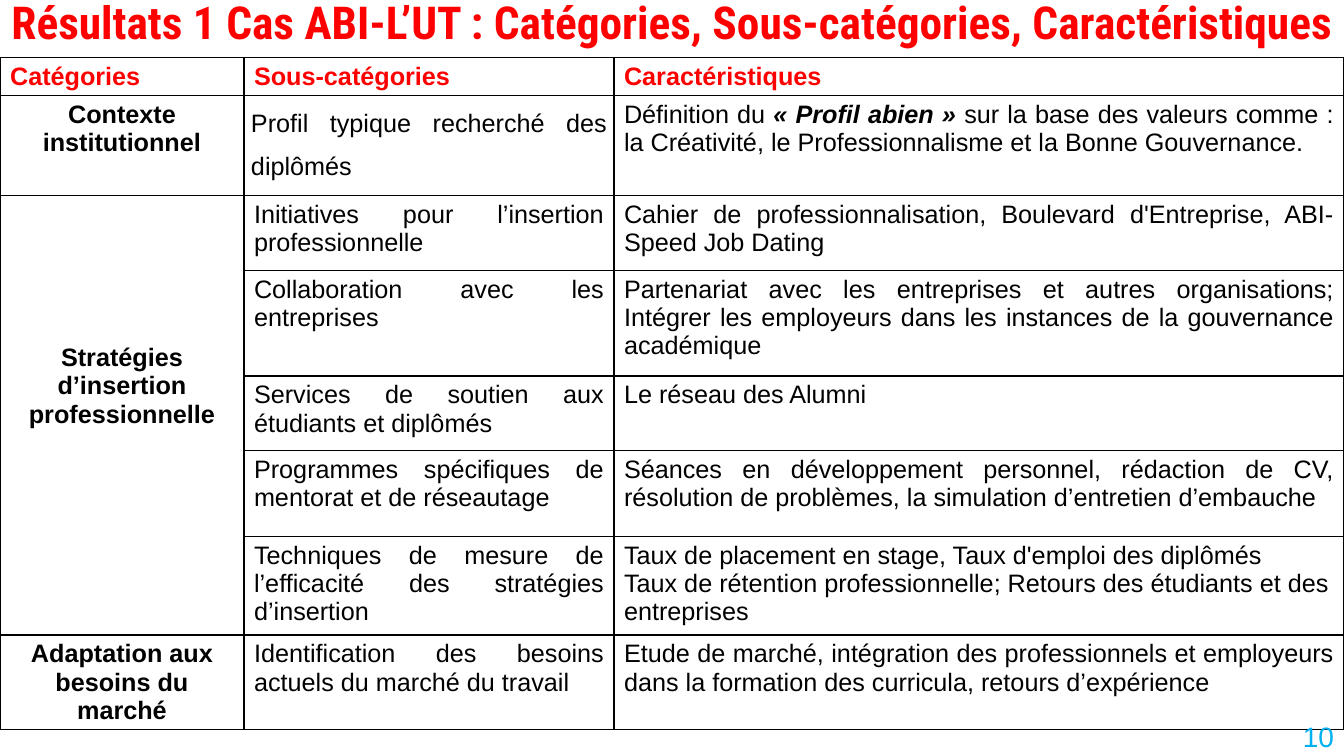
"""Build the results slide: categories, sub-categories and characteristics."""
from dataclasses import dataclass

from lxml import etree
from pptx import Presentation
from pptx import util as u
from pptx.dml.color import RGBColor
from pptx.enum import text
from pptx.oxml import ns

RED, BLACK, BLUE = "FF0000", "000000", "00B0F0"
LEFT, CENTER = text.PP_ALIGN.LEFT, text.PP_ALIGN.CENTER
RIGHT, JUSTIFY = text.PP_ALIGN.RIGHT, text.PP_ALIGN.JUSTIFY
COLUMN_WIDTHS = (2.42, 3.67, 7.24)
STRATEGY_ROWS = (2, 6)
STRATEGY_TOP = 1.47
PROFILE = "« Profil abien »"


@dataclass(frozen=True)
class Row:
    height: float
    category: str
    subcategory: str
    features: str
    features_align: text.PP_ALIGN = JUSTIFY


ROWS = (
    Row(0.38, "Catégories", "Sous-catégories", "Caractéristiques"),
    Row(0.99, "Contexte institutionnel", "Profil typique recherché des diplômés",
        f"Définition du {PROFILE} sur la base des valeurs comme : la Créativité, "
        "le Professionnalisme et la Bonne Gouvernance."),
    Row(0.74, "Stratégies d’insertion professionnelle",
        "Initiatives pour l’insertion professionnelle",
        "Cahier de professionnalisation, Boulevard d'Entreprise, ABI-Speed Job Dating"),
    Row(1.05, "", "Collaboration avec les entreprises",
        "Partenariat avec les entreprises et autres organisations; Intégrer les "
        "employeurs dans les instances de la gouvernance académique"),
    Row(0.74, "", "Services de soutien aux étudiants et diplômés", "Le réseau des Alumni"),
    Row(0.85, "", "Programmes spécifiques de mentorat et de réseautage",
        "Séances en développement personnel, rédaction de CV, résolution de problèmes, "
        "la simulation d’entretien d’embauche"),
    Row(0.98, "", "Techniques de mesure de l’efficacité des stratégies d’insertion",
        "Taux de placement en stage, Taux d'emploi des diplômés\n"
        "Taux de rétention professionnelle; Retours des étudiants et des entreprises", LEFT),
    Row(0.94, "Adaptation aux besoins du marché",
        "Identification des besoins actuels du marché du travail",
        "Etude de marché, intégration des professionnels et employeurs dans la formation "
        "des curricula, retours d’expérience"),
)


def rgb(value: str) -> RGBColor:
    return RGBColor.from_string(value)


def style(frame, size: float, color: str, align: text.PP_ALIGN,
          bold: bool = False, font: str = "Arial") -> None:
    for paragraph in frame.paragraphs:
        paragraph.alignment = align
        for run in paragraph.runs:
            run.font.name, run.font.size, run.font.bold = font, u.Pt(size), bold
            run.font.color.rgb = rgb(color)


def outline(cell) -> None:
    properties = cell._tc.get_or_add_tcPr()
    for side in ("lnL", "lnR", "lnT", "lnB"):
        line = etree.SubElement(properties, ns.qn(f"a:{side}"), w=str(u.Pt(1)))
        fill = etree.SubElement(line, ns.qn("a:solidFill"))
        etree.SubElement(fill, ns.qn("a:srgbClr"), val=BLACK)
    cell.fill.background()


def emphasise(paragraph, phrase: str) -> None:
    before, after = paragraph.text.split(phrase)
    paragraph.text = before
    for part in (phrase, after):
        paragraph.add_run().text = part
    paragraph.runs[1].font.italic = True


def add_title(slide) -> None:
    title = slide.shapes.title
    title.left, title.top = u.Inches(0), u.Inches(0.03)
    title.width, title.height = u.Inches(13.33), u.Inches(0.44)
    frame = title.text_frame
    frame.text = "Résultats 1 Cas ABI-L’UT : Catégories, Sous-catégories, Caractéristiques"
    frame.auto_size = text.MSO_AUTO_SIZE.NONE
    frame.vertical_anchor = text.MSO_ANCHOR.MIDDLE
    frame.margin_left = frame.margin_right = u.Inches(0)
    frame.paragraphs[0].line_spacing = 0.9
    style(frame, 32.4, RED, CENTER, True, "Roboto Condensed")


def add_results(slide) -> None:
    height = sum(row.height for row in ROWS)
    table = slide.shapes.add_table(
        len(ROWS), len(COLUMN_WIDTHS), u.Inches(0), u.Inches(0.57),
        u.Inches(13.33), u.Inches(height)).table
    table.first_row = table.horz_banding = False
    for column, width in zip(table.columns, COLUMN_WIDTHS):
        column.width = u.Inches(width)
    for index, row in enumerate(ROWS):
        table.rows[index].height = u.Inches(row.height)
        header = index == 0
        aligns = (JUSTIFY if header else CENTER, JUSTIFY, row.features_align)
        for position, content in enumerate((row.category, row.subcategory, row.features)):
            cell = table.cell(index, position)
            outline(cell)
            cell.text_frame.text = content
            if PROFILE in content:
                emphasise(cell.text_frame.paragraphs[0], PROFILE)
            style(cell.text_frame, 18, RED if header else BLACK, aligns[position],
                  header or position == 0)
    table.cell(1, 2).text_frame.paragraphs[0].runs[1].font.bold = True

    profile = table.cell(1, 1)
    profile.margin_left = profile.margin_right = u.Inches(0.07)
    profile.margin_top = profile.margin_bottom = u.Inches(0)
    profile.text_frame.paragraphs[0].line_spacing = 1.5

    first, last = STRATEGY_ROWS
    strategy = table.cell(first, 0)
    strategy.merge(table.cell(last, 0))
    strategy.margin_top = u.Inches(STRATEGY_TOP)


def add_page_number(slide) -> None:
    frame = slide.shapes.add_textbox(
        u.Inches(10.33), u.Inches(7.1), u.Inches(3), u.Inches(0.4)).text_frame
    frame.word_wrap = True
    frame.vertical_anchor = text.MSO_ANCHOR.MIDDLE
    frame.text = "10"
    style(frame, 20, BLUE, RIGHT)


def main() -> None:
    deck = Presentation()
    deck.slide_width, deck.slide_height = u.Inches(13.33), u.Inches(7.5)
    slide = deck.slides.add_slide(deck.slide_layouts[5])
    add_title(slide)
    add_results(slide)
    add_page_number(slide)
    deck.save("out.pptx")


if __name__ == "__main__":
    main()
